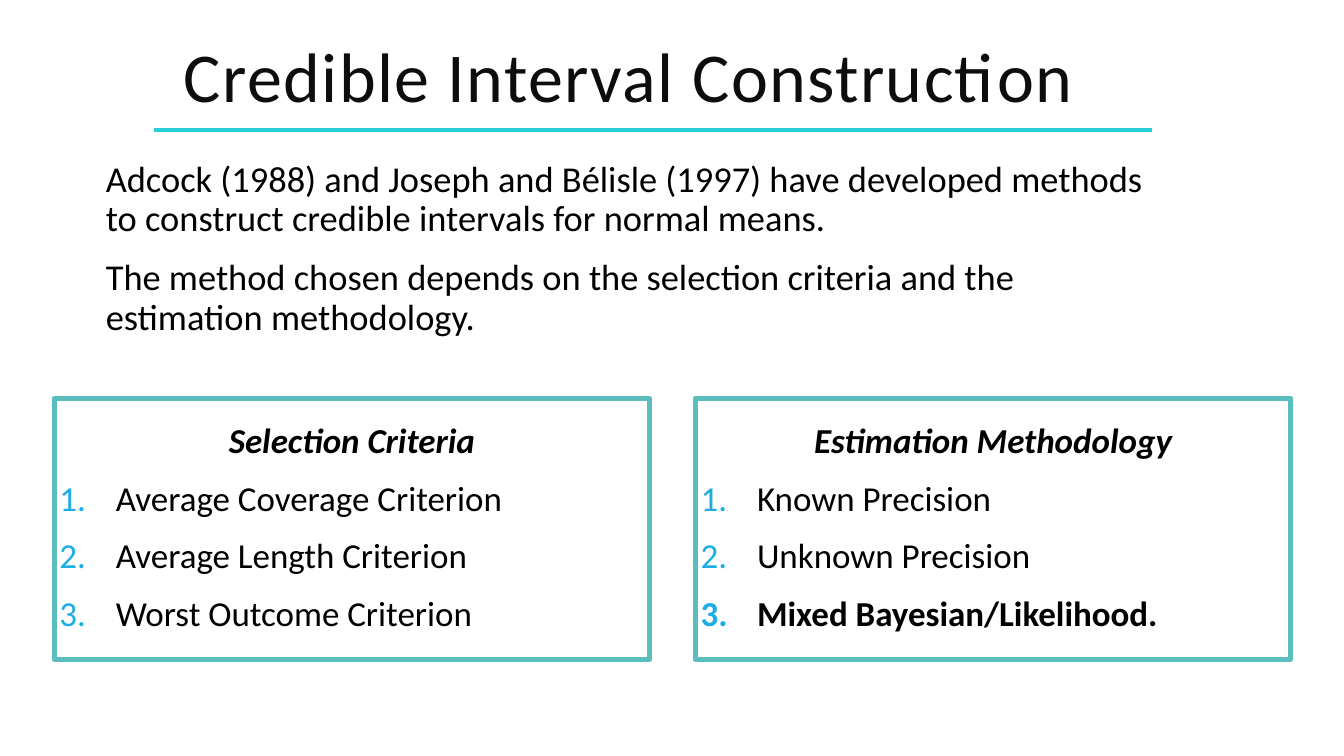
from lxml import etree
from pptx import Presentation
from pptx.dml.color import RGBColor
from pptx.enum.shapes import MSO_CONNECTOR, MSO_SHAPE
from pptx.enum.text import MSO_ANCHOR, MSO_AUTO_SIZE, PP_ALIGN
from pptx.oxml.ns import qn
from pptx.util import Inches, Pt

LEFT, CENTER = PP_ALIGN.LEFT, PP_ALIGN.CENTER
TOP, MIDDLE = MSO_ANCHOR.TOP, MSO_ANCHOR.MIDDLE
NO_FIT = MSO_AUTO_SIZE.NONE
RECT, STRAIGHT = MSO_SHAPE.RECTANGLE, MSO_CONNECTOR.STRAIGHT

WIDE, HIGH = Inches(13.33), Inches(7.5)
FONT, BLACK, WHITE = "Calibri", "000000", "FFFFFF"

INTRO = [
    "Adcock (1988) and Joseph and Bélisle (1997) have developed methods "
    "to construct credible intervals for normal means.",
    "The method chosen depends on the selection criteria and the "
    "estimation methodology.",
]
# Each panel: heading, numbered items, item set in bold
PANELS = [
    ("Selection Criteria",
     ["Average Coverage Criterion", "Average Length Criterion",
      "Worst Outcome Criterion"], None),
    ("Estimation Methodology",
     ["Known Precision", "Unknown Precision",
      "Mixed Bayesian/Likelihood."], 2),
]


def color(code):
    return RGBColor.from_string(code)


def across(share):
    """Percent of the slide's width."""
    return int(WIDE * share / 100)


def down(share):
    """Percent of the slide's height."""
    return int(HIGH * share / 100)


def area(x, y, w, h):
    return across(x), down(y), across(w), down(h)


def set_frame(frame, anchor):
    frame.word_wrap = True
    frame.auto_size = NO_FIT
    frame.vertical_anchor = anchor
    frame.margin_left = frame.margin_right = Inches(0.05)
    frame.margin_top = frame.margin_bottom = Inches(0.05)


def style(para, size, tone=BLACK, bold=False, italic=False):
    for run in para.runs:
        font = run.font
        font.name, font.size = FONT, Pt(size)
        font.bold, font.italic = bold, italic
        font.color.rgb = color(tone)


def write(frame, index, text, align=LEFT):
    para = frame.paragraphs[0] if index == 0 else frame.add_paragraph()
    para.text = text
    para.alignment = align
    para.line_spacing = 0.9
    para.space_before = Pt(12 if index else 0)
    para.space_after = Pt(2)
    return para


def number(para):
    """Hanging automatic number in blue."""
    props = para._p.get_or_add_pPr()
    props.set("marL", str(Inches(0.56)))
    props.set("indent", str(-Inches(0.56)))
    tint = etree.SubElement(props, qn("a:buClr"))
    etree.SubElement(tint, qn("a:srgbClr"), val="1CADE4")
    etree.SubElement(props, qn("a:buFont"), typeface="+mj-lt")
    etree.SubElement(props, qn("a:buAutoNum"), type="arabicPeriod")


def add_rule(slide):
    y = down(17.2)
    rule = slide.shapes.add_connector(STRAIGHT, across(11.48), y,
                                      across(85.75), y)
    rule.line.color.rgb = color("27CED7")
    rule.line.width = Pt(3)
    etree.SubElement(rule._element.spPr, qn("a:effectLst"))


def add_title(slide, text):
    title = slide.shapes.title
    title.left, title.top, title.width, title.height = area(
        9.38, 0, 74.87, 21.87)
    frame = title.text_frame
    frame.text = text
    set_frame(frame, MIDDLE)
    para = frame.paragraphs[0]
    para.alignment, para.line_spacing = CENTER, 0.8
    style(para, 50, "0D0D0D")
    para.runs[0].font._element.set("spc", "100")


def add_intro(slide, lines):
    box = slide.shapes.add_textbox(*area(7.5, 20.67, 78.54, 58.67))
    set_frame(box.text_frame, TOP)
    for index, text in enumerate(lines):
        style(write(box.text_frame, index, text), 26)


def add_panel(slide, column, head, items, strong):
    box = slide.shapes.add_shape(
        RECT, *area(4.05 + 47.71 * column, 52.67, 44.26, 34.53))
    box.shadow.inherit = False
    box.fill.solid()
    box.fill.fore_color.rgb = color(WHITE)
    box.line.color.rgb = color("59BEBD")
    box.line.width = Pt(3.75)
    frame = box.text_frame
    set_frame(frame, MIDDLE)
    style(write(frame, 0, head, CENTER), 25, bold=True, italic=True)
    for index, text in enumerate(items):
        para = write(frame, index + 1, text)
        number(para)
        style(para, 25, bold=index == strong)


def main():
    deck = Presentation()
    deck.slide_width, deck.slide_height = WIDE, HIGH
    slide = deck.slides.add_slide(deck.slide_layouts.get_by_name("Title Only"))

    # Heading and its rule
    add_rule(slide)
    add_title(slide, "Credible Interval Construction")

    # Introduction above the two panels
    add_intro(slide, INTRO)
    for column, panel in enumerate(PANELS):
        add_panel(slide, column, *panel)

    deck.save("out.pptx")


if __name__ == "__main__":
    main()
